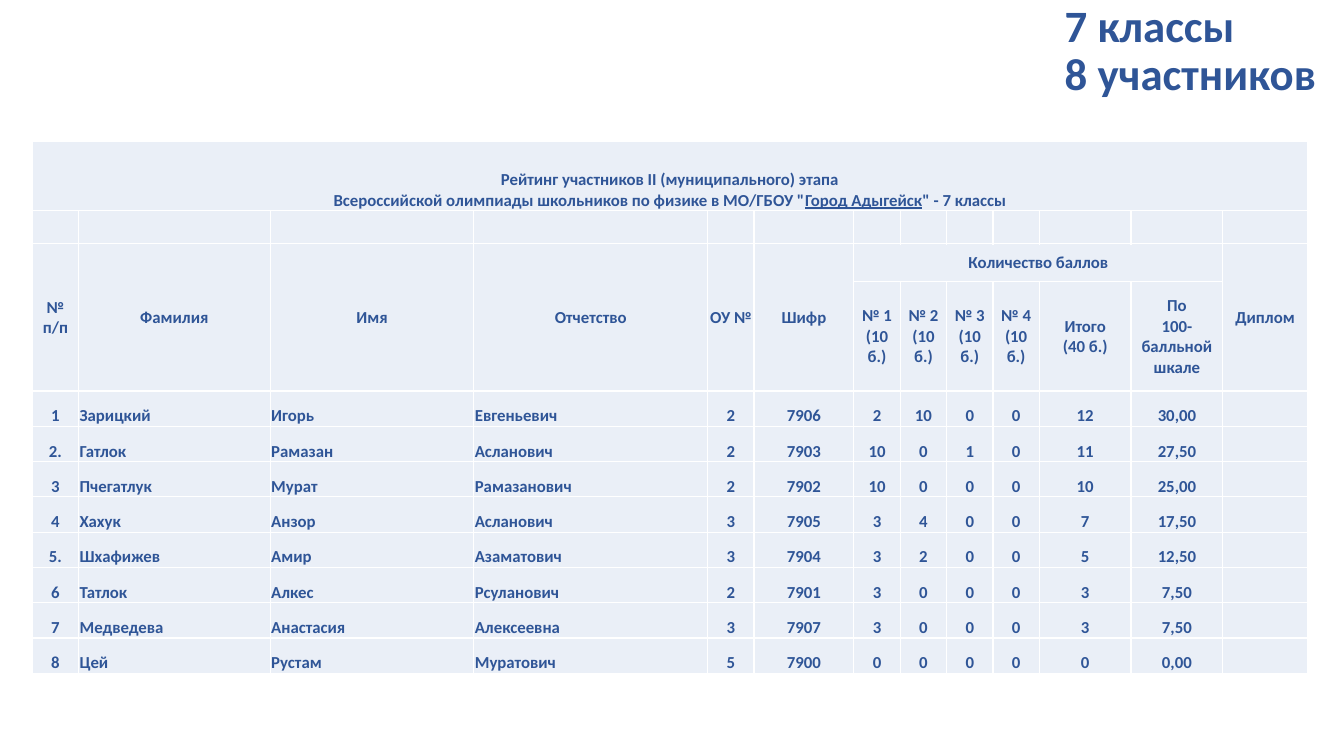
from lxml import etree
from pptx import Presentation
from pptx.dml.color import RGBColor
from pptx.enum import text
from pptx.oxml import ns
from pptx.util import Inches, Pt

# Content
HEADLINE = ["7 классы", "8 участников"]
# Each caption is a list of lines, each line a list of (words, underlined)
CAPTION = [
    [("Рейтинг участников II (муниципального) этапа", False)],
    [("Всероссийской олимпиады школьников по физике в МО/ГБОУ \"", False),
     ("Город Адыгейск", True), ("\" - 7 классы", False)],
]
PERSON_HEADS = ["№\nп/п", "Фамилия", "Имя", "Отчетство", "ОУ №", "Шифр"]
POINTS_HEAD = "Количество баллов"
POINT_HEADS = [f"№ {task}\n(10 б.)" for task in range(1, 5)]
POINT_HEADS += ["Итого\n(40 б.)", "По\n100-балльной\nшкале"]
DIPLOMA_HEAD = "Диплом"
MAX_POINTS = 40
# Number, surname, name, patronymic, school, code, points for four tasks
PUPILS = [
    ("1", "Зарицкий", "Игорь", "Евгеньевич", "2", "7906", (2, 10, 0, 0)),
    ("2.", "Гатлок", "Рамазан", "Асланович", "2", "7903", (10, 0, 1, 0)),
    ("3", "Пчегатлук", "Мурат", "Рамазанович", "2", "7902", (10, 0, 0, 0)),
    ("4", "Хахук", "Анзор", "Асланович", "3", "7905", (3, 4, 0, 0)),
    ("5.", "Шхафижев", "Амир", "Азаматович", "3", "7904", (3, 2, 0, 0)),
    ("6", "Татлок", "Алкес", "Рсуланович", "2", "7901", (3, 0, 0, 0)),
    ("7", "Медведева", "Анастасия", "Алексеевна", "3", "7907", (3, 0, 0, 0)),
    ("8", "Цей", "Рустам", "Муратович", "5", "7900", (0, 0, 0, 0)),
]

# Look
COLORS = {"text": "2F5597", "cell": "EAEFF7", "border": "FFFFFF"}
FONT = "Calibri"
COL_WIDTHS = [0.46, 1.9, 2.02, 2.32, 0.46, 0.99] + [0.46] * 4 + [0.91, 0.91, 0.84]
ROW_HEIGHTS = [0.69, 0.33, 0.37, 1.09] + [0.35] * len(PUPILS)
HEAD_ROW, SUBHEAD_ROW, FIRST_PUPIL_ROW = 2, 3, 4
NAME_COLS = (1, 2, 3)
POINTS_COL = len(PERSON_HEADS)
DIPLOMA_COL = len(COL_WIDTHS) - 1
CENTER, LEFT = text.PP_ALIGN.CENTER, text.PP_ALIGN.LEFT
MIDDLE, BOTTOM = text.MSO_ANCHOR.MIDDLE, text.MSO_ANCHOR.BOTTOM


def write_lines(paragraph, lines, size, align):
    paragraph.alignment = align
    for number, line in enumerate(lines):
        if number:
            paragraph.add_line_break()
        for words, underlined in line:
            run = paragraph.add_run()
            run.text = words
            run.font.name = FONT
            run.font.size = Pt(size)
            run.font.bold = True
            run.font.underline = underlined
            run.font.color.rgb = RGBColor.from_string(COLORS["text"])


def plain(words):
    return [[(line, False)] for line in words.split("\n")]


def style_cell(cell):
    props = cell._tc.get_or_add_tcPr()
    for side in ("a:lnL", "a:lnR", "a:lnT", "a:lnB"):
        border = etree.SubElement(props, ns.qn(side), w=str(Pt(1)))
        fill = etree.SubElement(border, ns.qn("a:solidFill"))
        etree.SubElement(fill, ns.qn("a:srgbClr"), val=COLORS["border"])
    cell.fill.solid()
    cell.fill.fore_color.rgb = RGBColor.from_string(COLORS["cell"])
    cell.margin_left = cell.margin_right = cell.margin_top = Inches(0.01)
    cell.margin_bottom = 0
    # Keeps empty cells from stretching their row
    cell.text_frame.paragraphs[0]._p.get_or_add_endParaRPr().set("sz", "1200")


def fill_cell(row, col, lines, anchor=MIDDLE, align=CENTER):
    cell = rating.cell(row, col)
    cell.vertical_anchor = anchor
    write_lines(cell.text_frame.paragraphs[0], lines, 12, align)


deck = Presentation()
deck.slide_width, deck.slide_height = Inches(13.33), Inches(7.5)
slide = deck.slides.add_slide(deck.slide_layouts[5])

# Title
headline = slide.shapes.title
headline.left, headline.top = Inches(10.46), Inches(0)
headline.width, headline.height = Inches(2.87), Inches(1.03)
headline.text_frame.vertical_anchor = MIDDLE
headline.text_frame.word_wrap = True
headline_par = headline.text_frame.paragraphs[0]
headline_par.line_spacing = 0.9
write_lines(headline_par, plain("\n".join(HEADLINE)), 32, LEFT)

# Table grid
rating = slide.shapes.add_table(
    len(ROW_HEIGHTS), len(COL_WIDTHS), Inches(0.32), Inches(1.4),
    Inches(sum(COL_WIDTHS)), Inches(sum(ROW_HEIGHTS))).table
rating.first_row = rating.horz_banding = False
for column, width in zip(rating.columns, COL_WIDTHS):
    column.width = Inches(width)
for row, height in zip(rating.rows, ROW_HEIGHTS):
    row.height = Inches(height)
for cell in rating.iter_cells():
    style_cell(cell)

# Caption and headings
rating.cell(0, 0).merge(rating.cell(0, DIPLOMA_COL))
fill_cell(0, 0, CAPTION, BOTTOM)
for col, head in [*enumerate(PERSON_HEADS), (DIPLOMA_COL, DIPLOMA_HEAD)]:
    rating.cell(HEAD_ROW, col).merge(rating.cell(SUBHEAD_ROW, col))
    fill_cell(HEAD_ROW, col, plain(head))
rating.cell(HEAD_ROW, POINTS_COL).merge(rating.cell(HEAD_ROW, DIPLOMA_COL - 1))
fill_cell(HEAD_ROW, POINTS_COL, plain(POINTS_HEAD))
for col, head in enumerate(POINT_HEADS, POINTS_COL):
    fill_cell(SUBHEAD_ROW, col, plain(head))

# Pupils, with the total and the 100-point score worked out
for row, (*person, points) in enumerate(PUPILS, FIRST_PUPIL_ROW):
    total = sum(points)
    score = f"{total / MAX_POINTS * 100:.2f}".replace(".", ",")
    for col, value in enumerate([*person, *points, total, score]):
        align = LEFT if col in NAME_COLS else CENTER
        fill_cell(row, col, plain(str(value)), BOTTOM, align)

deck.save("out.pptx")
